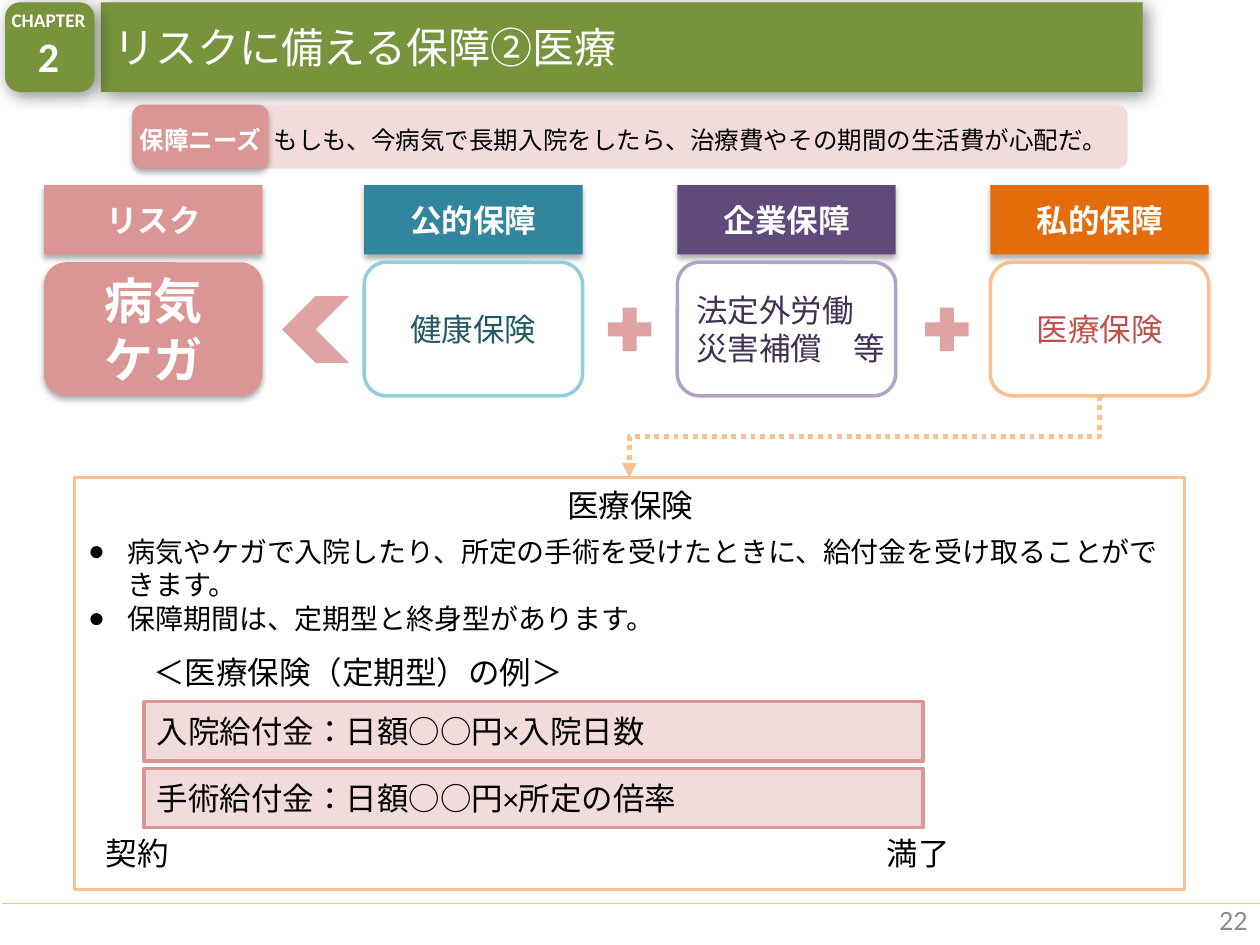
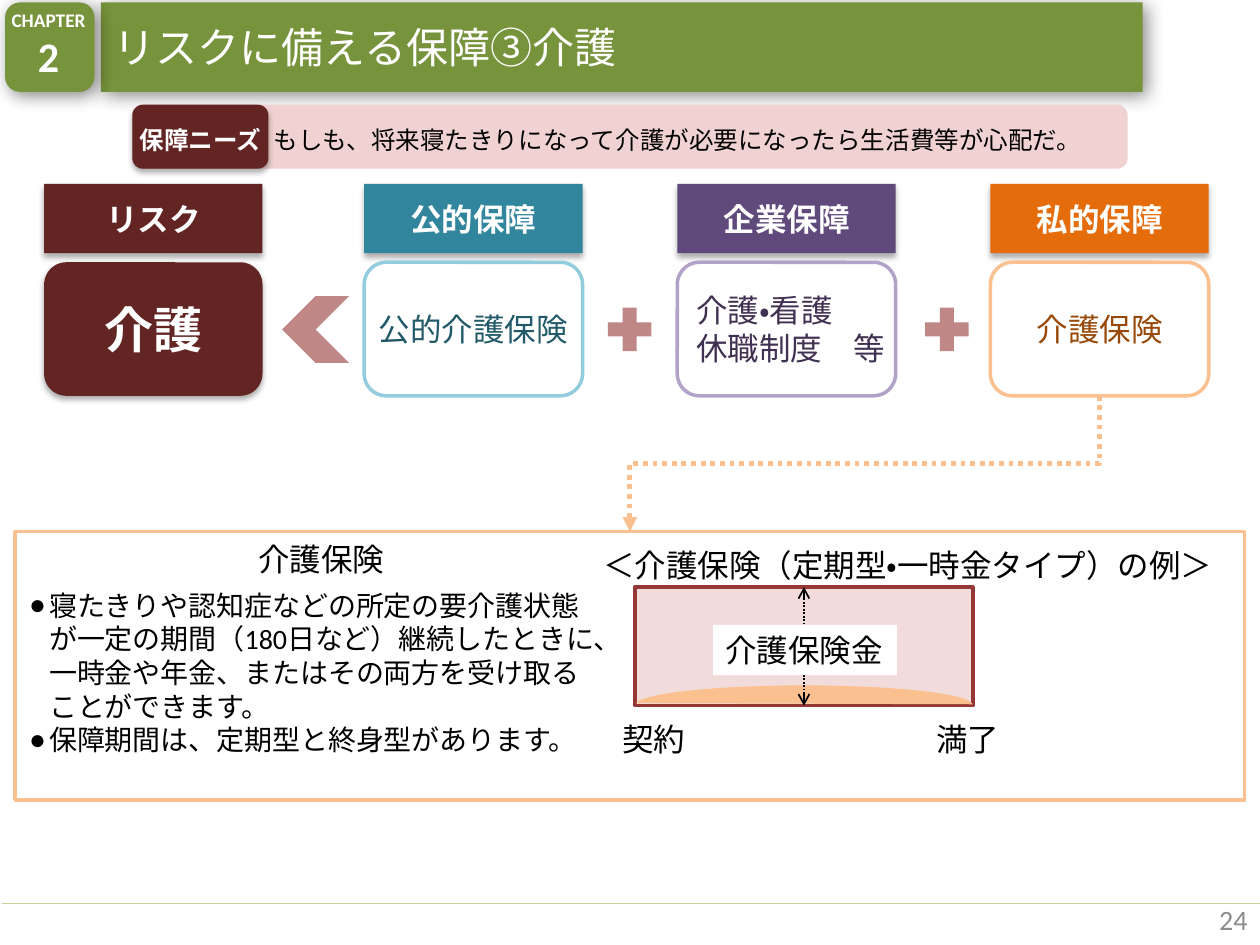
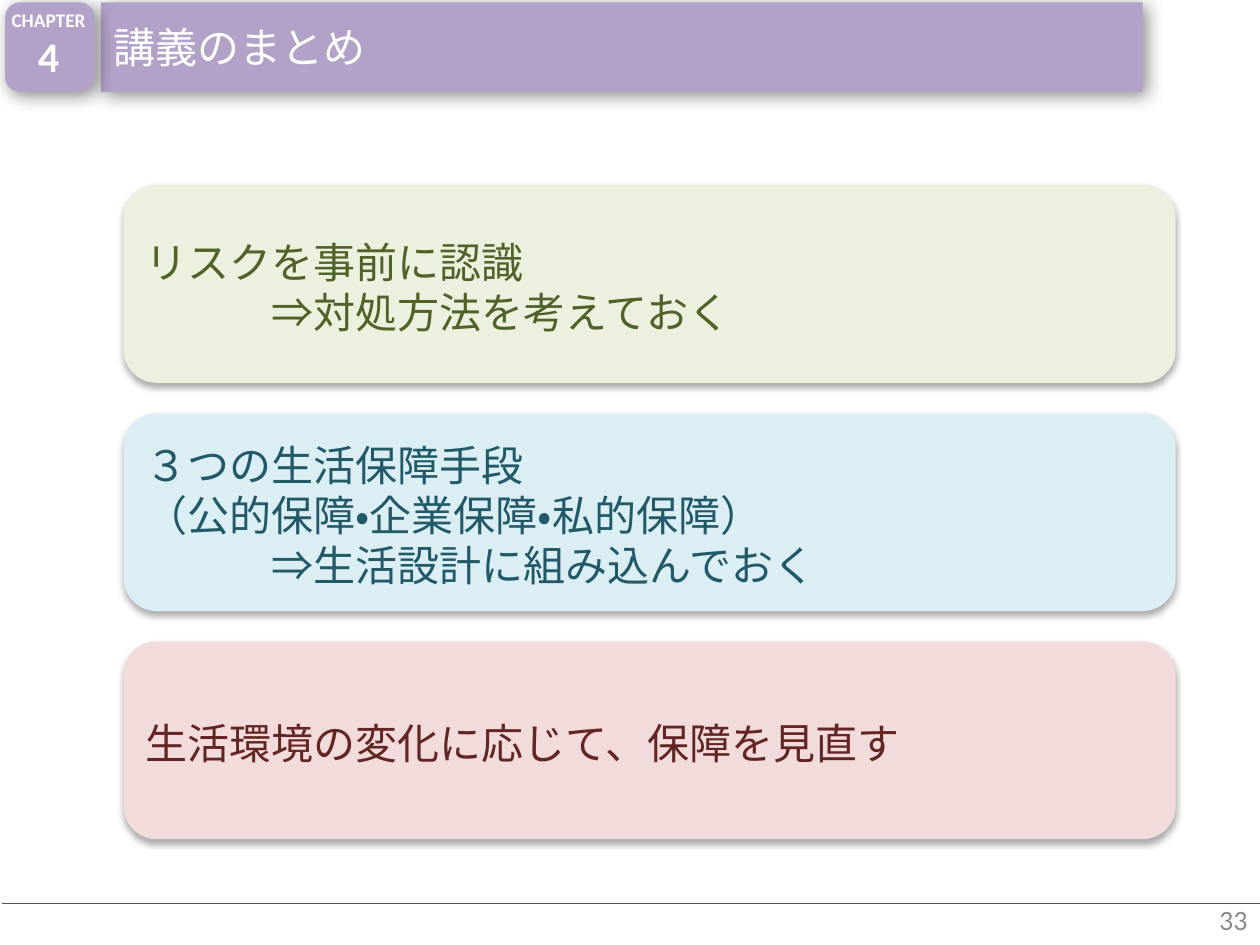
from lxml import etree
from pptx import Presentation
from pptx.dml.color import RGBColor
from pptx.enum.dml import MSO_LINE
from pptx.enum.lang import MSO_LANGUAGE_ID
from pptx.enum.shapes import MSO_CONNECTOR, MSO_SHAPE
from pptx.enum.text import MSO_ANCHOR, MSO_AUTO_SIZE, PP_ALIGN
from pptx.oxml.ns import qn
from pptx.util import Pt

RECT, ROUND = MSO_SHAPE.RECTANGLE, MSO_SHAPE.ROUNDED_RECTANGLE
PLUS, CHEVRON, CHORD = MSO_SHAPE.MATH_PLUS, MSO_SHAPE.CHEVRON, MSO_SHAPE.CHORD
STRAIGHT, ELBOW = MSO_CONNECTOR.STRAIGHT, MSO_CONNECTOR.ELBOW
LEFT, CENTER, RIGHT = PP_ALIGN.LEFT, PP_ALIGN.CENTER, PP_ALIGN.RIGHT
TOP, MIDDLE = MSO_ANCHOR.TOP, MSO_ANCHOR.MIDDLE
DOTS, JAPANESE = MSO_LINE.ROUND_DOT, MSO_LANGUAGE_ID.JAPANESE
NO_FIT = MSO_AUTO_SIZE.NONE
FONT = "Calibri"

COLORS = {
    "white": "FFFFFF", "black": "000000", "grey": "8C8C8C",
    "green": "77933C", "green_rule": "C3D69B", "green_pale": "EBF1DE", "green_dark": "4F6228",
    "teal": "31859C", "teal_line": "93CDDD", "teal_pale": "DBEEF4", "teal_dark": "215968",
    "purple": "604A7B", "purple_line": "B3A2C7", "purple_dark": "403152",
    "orange": "E46C0A", "orange_line": "FAC090", "orange_dark": "984807",
    "pink": "D99694", "pink_sign": "DEA3A2", "pink_pale": "F2DCDB", "pink_need": "EFD2D1",
    "red": "C0504D", "red_line": "953735", "maroon": "632523",
}
# Shadows: opacity %, blur, distance, angle
SOFT_SHADOW = (32, 3.5, 2.2, 90)
BAND_SHADOW = (45, 10, 3, 45)
NEED_INSETS = (7.2, 5.8, 7.2, 2.9)
BADGE_INSETS = (5.8, 2.9, 7.2, 5.8)

# Content
HEADS = [("リスク", None), ("公的保障", "teal"), ("企業保障", "purple"), ("私的保障", "orange")]
CARD_LINES = ["teal_line", "purple_line", "orange_line"]

MEDICAL = {
    "page": "22", "title": "リスクに備える保障②医療", "tone": "pink",
    "need": "もしも、今病気で長期入院をしたら、治療費やその期間の生活費が心配だ。",
    "need_fill": "pink_pale", "sign": "pink_sign", "sign_alpha": None, "head_top": 105.8,
    "risk": ["病気", "ケガ"],
    "cards": [(["健康保険"], "teal_dark", CENTER),
              (["法定外労働", "災害補償　等"], "purple_dark", LEFT),
              (["医療保険"], "red", CENTER)],
    "frame": (42.5, 272.9, 634.3, 235.4),
    "list_box": (43.2, 301.7, 634.3, 65.5), "list_indent": 22.5,
    "list": ["病気やケガで入院したり、所定の手術を受けたときに、給付金を受け取ることができます。",
             "保障期間は、定期型と終身型があります。"],
    "labels": [("医療保険", (185.8, 274.3, 348.5), CENTER),
               ("＜医療保険（定期型）の例＞", (80.6, 369.4, 279.4), LEFT),
               ("契約", (53.3, 473, 64.8), LEFT), ("満了", (499.7, 473, 64.8), LEFT)],
}
BENEFITS = ["入院給付金：日額○○円×入院日数", "手術給付金：日額○○円×所定の倍率"]

CARE = {
    "page": "24", "title": "リスクに備える保障③介護", "tone": "maroon",
    "need": "もしも、将来寝たきりになって介護が必要になったら生活費等が心配だ。",
    "need_fill": "pink_need", "sign": "red_line", "sign_alpha": 60, "head_top": 105.1,
    "risk": ["介護"],
    "cards": [(["公的介護保険"], "teal_dark", CENTER),
              (["介護・看護", "休職制度　等"], "purple_dark", LEFT),
              (["介護保険"], "orange_dark", CENTER)],
    "frame": (8.6, 303.8, 702.7, 153.4),
    "list_box": (9.4, 332.6, 339.1, 104.4), "list_indent": 11.5,
    "list": ["寝たきりや認知症などの所定の要介護状態が一定の期間（180日など）継続したときに、"
             "一時金や年金、またはその両方を受け取ることができます。",
             "保障期間は、定期型と終身型があります。"],
    "labels": [("介護保険", (9.4, 305.3, 348.5), CENTER),
               ("＜介護保険（定期型・一時金タイプ）の例＞", (337.7, 308.2, 378.7), LEFT),
               ("契約", (348.5, 408.2, 64.8), LEFT), ("満了", (527.8, 408.2, 64.8), LEFT)],
}

# A line with an indent is a (text, overrides) pair
SUMMARY = [
    (["リスクを事前に認識", ("⇒対処方法を考えておく", {"indent": 72})], "green_pale", "green_dark"),
    (["３つの生活保障手段", "（公的保障・企業保障・私的保障）",
      ("⇒生活設計に組み込んでおく", {"indent": 72})], "teal_pale", "teal_dark"),
    (["生活環境の変化に応じて、保障を見直す"], "pink_pale", "maroon"),
]


# Helpers
def assign(target, values):
    for name, value in values.items():
        setattr(target, name, value)


def rgb(name):
    return RGBColor.from_string(COLORS[name])


def sub(parent, tag, **attributes):
    element = etree.SubElement(parent, qn(tag))
    for name, value in attributes.items():
        element.set(name, str(value))
    return element


def place(item, box):
    assign(item, dict(zip(("left", "top", "width", "height"), map(Pt, box))))


def paint(item, fill=None, line=None, width=2, shadow=None, alpha=None):
    if fill:
        item.fill.solid()
        item.fill.fore_color.rgb = rgb(fill)
    else:
        item.fill.background()
    if line:
        item.line.color.rgb = rgb(line)
        item.line.width = Pt(width)
    else:
        item.line.fill.background()
    item.shadow.inherit = False
    properties = item._element.spPr
    if alpha:
        sub(properties.find(".//" + qn("a:srgbClr")), "a:alpha", val=alpha * 1000)
    if shadow:
        opacity, blur, distance, angle = shadow
        outer = sub(properties.find(qn("a:effectLst")), "a:outerShdw", blurRad=Pt(blur),
                    dist=Pt(distance), dir=angle * 60000, algn="tl", rotWithShape=0)
        black = sub(outer, "a:srgbClr", val=COLORS["black"])
        sub(black, "a:alpha", val=opacity * 1000)


def write(item, lines, size=18, color="black", bold=False, align=LEFT, anchor=MIDDLE,
          wrap=False, insets=(7.2, 3.6, 7.2, 3.6), indent=0, bullet=None):
    frame = item.text_frame
    assign(frame, {"auto_size": NO_FIT, "word_wrap": wrap, "vertical_anchor": anchor})
    sides = ("margin_left", "margin_top", "margin_right", "margin_bottom")
    assign(frame, dict(zip(sides, map(Pt, insets))))
    for i, line in enumerate(lines):
        text, own = (line, {}) if isinstance(line, str) else line
        paragraph = frame.add_paragraph() if i else frame.paragraphs[0]
        assign(paragraph, {"alignment": align, "space_before": Pt(0)})
        properties = paragraph._p.get_or_add_pPr()
        properties.set("marL", str(Pt(own.get("indent", indent))))
        properties.set("indent", str(Pt(-22.5 if bullet else 0)))
        if bullet:
            sub(properties, "a:buChar", char=bullet)
        run = paragraph.add_run()
        run.text = text
        assign(run.font, {"name": FONT, "size": Pt(own.get("size", size)), "bold": bold,
                          "language_id": JAPANESE})
        run.font.color.rgb = rgb(color)


def add_block(slide, kind, box, lines=(), text=None, **look):
    block = slide.shapes.add_shape(kind, *map(Pt, box))
    paint(block, **look)
    if lines:
        write(block, lines, **(text or {}))
    return block


def add_label(slide, text, box, **style):
    write(slide.shapes.add_textbox(*map(Pt, box)), [text], wrap=True, **style)


def add_line(slide, kind, points, color, width, dash=None, head=None, tail=None):
    line = slide.shapes.add_connector(kind, *map(Pt, points))
    line.line.color.rgb = rgb(color)
    assign(line.line, {"width": Pt(width), "dash_style": dash})
    properties = line._element.spPr
    for tag, end in (("a:headEnd", head), ("a:tailEnd", tail)):
        if end:
            sub(properties.find(qn("a:ln")), tag, type=end)
    sub(properties, "a:effectLst")
    return line


# Shared parts: title band, chapter badge, rule and page number
def start_slide(deck, layout, title, chapter, page, band, rule):
    slide = deck.slides.add_slide(deck.slide_layouts[layout])
    heading = slide.shapes.title
    place(heading, (57.6, 1.4, 595.4, 51.1))
    paint(heading, fill=band, shadow=BAND_SHADOW)
    write(heading, [title], size=24, color="white", wrap=True)
    add_block(slide, ROUND, (2.9, 1.4, 51.1, 51.1), ["CHAPTER", (chapter, {"size": 24})],
              {"size": 11, "color": "white", "bold": True, "align": CENTER,
               "insets": BADGE_INSETS}, fill=band, shadow=BAND_SHADOW)
    add_line(slide, STRAIGHT, (1.4, 516.2, 720, 516.2), rule, 0.75)
    add_label(slide, page, (552.2, 511.2, 167.8, 28.8), size=16, color="grey", align=RIGHT)
    return slide


# Risk and the three kinds of cover, with the detail frame below
def add_cover_slide(deck, topic):
    slide = start_slide(deck, 1, topic["title"], "2", topic["page"], "green", "green_rule")
    tone = topic["tone"]
    strong = {"color": "white", "bold": True, "align": CENTER}

    add_block(slide, ROUND, (75.6, 59.8, 568.8, 36.6), [topic["need"]],
              {"size": 14, "indent": 72, "insets": NEED_INSETS}, fill=topic["need_fill"])
    add_block(slide, ROUND, (75.6, 59.8, 77.8, 36.6), ["保障ニーズ"],
              {"size": 14, "insets": NEED_INSETS, **strong}, fill=tone, shadow=SOFT_SHADOW)

    card_width, card_top, card_height = 124.8, 149.9, 76.3
    columns = [25.2] + [208.1 + 178.9 * i for i in range(3)]
    for left, (head, color) in zip(columns, HEADS):
        add_block(slide, RECT, (left, topic["head_top"], card_width, 39.6), [head], strong,
                  fill=color or tone, shadow=SOFT_SHADOW)
    add_block(slide, ROUND, (columns[0], card_top, card_width, card_height), topic["risk"],
              {"size": 28, **strong}, fill=tone, shadow=SOFT_SHADOW)
    for left, outline, (lines, color, align) in zip(columns[1:], CARD_LINES, topic["cards"]):
        add_block(slide, ROUND, (left, card_top, card_width, card_height), lines,
                  {"color": color, "align": align}, line=outline)

    sign = {"fill": topic["sign"], "alpha": topic["sign_alpha"]}
    chevron = add_block(slide, CHEVRON, (161.3, 169.2, 38.2, 38.2), **sign)
    chevron._element.spPr.find(qn("a:xfrm")).set("flipH", "1")
    for left in (342.9, 524.2):
        add_block(slide, PLUS, (left, 171.4, 33.8, 33.8), **sign)

    # Detail frame, reached by a bent arrow turned a quarter
    frame = topic["frame"]
    add_block(slide, RECT, frame, line="orange_line")
    start_x, start_y = columns[-1] + card_width / 2, card_top + card_height
    end_x, end_y = frame[0] + frame[2] / 2, frame[1]
    drop, reach = end_y - start_y, start_x - end_x
    left, top = (start_x + end_x - drop) / 2, (start_y + end_y - reach) / 2
    arrow = add_line(slide, ELBOW, (left, top, left + drop, top + reach),
                     "orange_line", 2.75, DOTS, tail="triangle")
    arrow._element.spPr.find(qn("a:xfrm")).set("rot", "5400000")

    details = slide.placeholders[1]
    place(details, topic["list_box"])
    write(details, topic["list"], size=16, anchor=TOP, wrap=True,
          indent=topic["list_indent"], bullet="●")
    for text, box, align in topic["labels"]:
        add_label(slide, text, (*box, 28.8), align=align, anchor=TOP)
    return slide


def add_benefit_bars(slide):
    for i, benefit in enumerate(BENEFITS):
        add_block(slide, RECT, (82.4, 401 + 38.2 * i, 445, 33.8), [benefit],
                  fill="pink_pale", line="pink")


def add_care_diagram(slide):
    left, top, width, height = 362.9, 335.5, 193, 67.7
    add_block(slide, RECT, (left, top, width, height), fill="pink_pale", line="red_line")
    mound = add_block(slide, CHORD, (left, 391.7, width, 22.3), fill="orange_line")
    for i, angle in enumerate((108.36, 215.86)):
        mound.adjustments[i] = angle
    middle = left + width / 2
    add_line(slide, STRAIGHT, (middle, top, middle, top + height), "black", 1, DOTS,
             head="arrow", tail="arrow")
    add_block(slide, RECT, (407.5, 357.1, 105.1, 28.8), ["介護保険金"], {"anchor": TOP},
              fill="white")


def add_summary_slide(deck):
    slide = start_slide(deck, 5, "講義のまとめ", "4", "33", "purple_line", "purple")
    for i, (lines, fill, color) in enumerate(SUMMARY):
        add_block(slide, ROUND, (70.6, 105.8 + 130.4 * i, 601.2, 113), lines,
                  {"size": 24, "color": color, "insets": NEED_INSETS},
                  fill=fill, shadow=SOFT_SHADOW)


def main():
    deck = Presentation()
    assign(deck, {"slide_width": Pt(720), "slide_height": Pt(540)})
    add_benefit_bars(add_cover_slide(deck, MEDICAL))
    add_care_diagram(add_cover_slide(deck, CARE))
    add_summary_slide(deck)
    deck.save("out.pptx")


if __name__ == "__main__":
    main()
